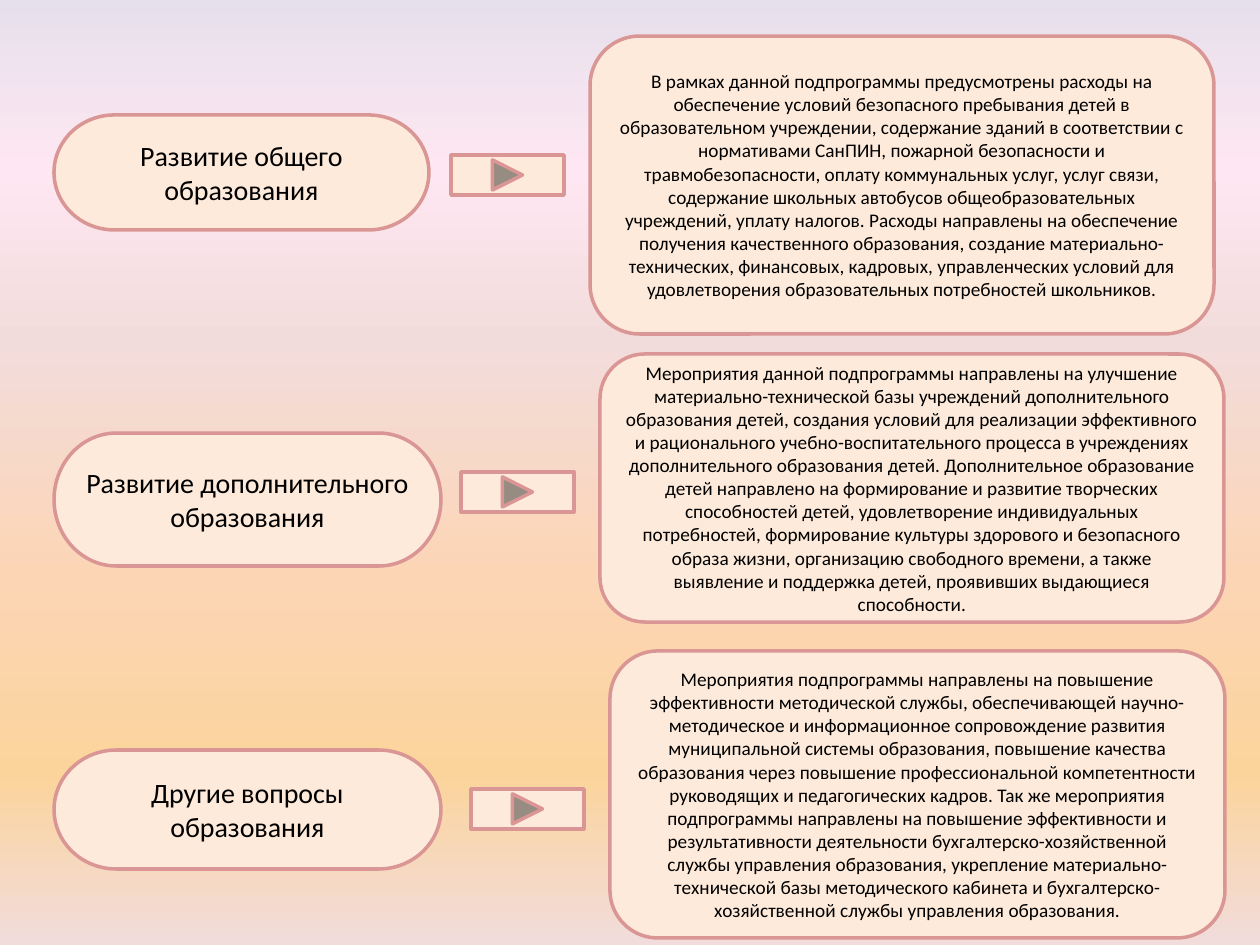
from dataclasses import dataclass

from pptx import Presentation
from pptx import util as u
from pptx.dml.color import RGBColor
from pptx.enum import shapes, text
from pptx.oxml import parse_xml
from pptx.oxml.ns import nsdecls

EMU_PER_PX = 914400 / 126


def px(length):
    return u.Emu(round(length * EMU_PER_PX))


@dataclass(frozen=True)
class Theme:
    font: str = "Calibri"
    fill: str = "FDEADA"
    border: str = "D99694"
    ink: str = "000000"
    border_width: int = 2
    label_size: int = 16
    body_size: int = 11
    # Background stops from top to bottom: percent, colour
    background: tuple = (
        (0, "E6E0EC"), (18, "FEE7F2"), (36, "F2DCDB"),
        (61, "FCD5B5"), (82, "FBD49C"), (100, "F2DCDB"),
    )


def write_text(frame, content, *, font, size, color):
    frame.word_wrap = True
    frame.vertical_anchor = text.MSO_ANCHOR.MIDDLE
    paragraph = frame.paragraphs[0]
    paragraph.alignment = text.PP_ALIGN.CENTER
    run = paragraph.add_run()
    run.text = content
    run.font.name = font
    run.font.size = u.Pt(size)
    run.font.color.rgb = RGBColor.from_string(color)


class SlideBuilder:
    def __init__(self, slide, theme):
        self.slide = slide
        self.theme = theme

    def background(self):
        fill = self.slide.background.fill
        fill.gradient()
        stops = self.slide.element.xpath(".//p:bgPr//a:gsLst")[0]
        for stop in list(stops):
            stops.remove(stop)
        for percent, color in self.theme.background:
            stops.append(parse_xml(
                f'<a:gs {nsdecls("a")} pos="{percent * 1000}">'
                f'<a:srgbClr val="{color}"/></a:gs>'))
        fill.gradient_angle = 270

    def outlined_shape(self, kind, box):
        shape = self.slide.shapes.add_shape(kind, *map(px, box))
        shape.shadow.inherit = False
        shape.fill.solid()
        shape.fill.fore_color.rgb = RGBColor.from_string(self.theme.fill)
        shape.line.color.rgb = RGBColor.from_string(self.theme.border)
        shape.line.width = u.Pt(self.theme.border_width)
        return shape

    def label(self, box, content):
        shape = self.outlined_shape(shapes.MSO_SHAPE.FLOWCHART_TERMINATOR, box)
        write_text(shape.text_frame, content, font=self.theme.font,
                   size=self.theme.label_size, color=self.theme.ink)

    def description(self, box, content):
        shape = self.outlined_shape(shapes.MSO_SHAPE.ROUNDED_RECTANGLE, box)
        write_text(shape.text_frame, content, font=self.theme.font,
                   size=self.theme.body_size, color=self.theme.ink)

    def forward_button(self, box):
        self.outlined_shape(
            shapes.MSO_SHAPE.ACTION_BUTTON_FORWARD_OR_NEXT, box)


# Each subprogramme: label, label box, description box, description
SUBPROGRAMMES = (
    ("Развитие общего образования",
     (54, 115, 375, 115), (590, 36, 624, 298),
     "В рамках данной подпрограммы предусмотрены расходы на обеспечение "
     "условий безопасного пребывания детей в образовательном учреждении, "
     "содержание зданий в соответствии с нормативами СанПИН, пожарной "
     "безопасности и травмобезопасности, оплату коммунальных услуг, услуг "
     "связи, содержание школьных автобусов общеобразовательных учреждений, "
     "уплату налогов. Расходы направлены на обеспечение получения "
     "качественного образования, создание материально- технических, "
     "финансовых, кадровых, управленческих условий для удовлетворения "
     "образовательных потребностей школьников."),
    ("Развитие дополнительного образования",
     (54, 433, 387, 133), (600, 354, 624, 268),
     "Мероприятия данной подпрограммы направлены на улучшение "
     "материально-технической базы учреждений дополнительного образования "
     "детей, создания условий для реализации эффективного и рационального "
     "учебно-воспитательного процесса в учреждениях дополнительного "
     "образования детей. Дополнительное образование детей направлено на "
     "формирование и развитие творческих способностей детей, удовлетворение "
     "индивидуальных потребностей, формирование культуры здорового и "
     "безопасного образа жизни, организацию свободного времени, а также "
     "выявление и поддержка детей, проявивших выдающиеся способности."),
    ("Другие вопросы образования",
     (54, 750, 387, 119), (610, 651, 615, 287),
     "Мероприятия подпрограммы направлены на повышение эффективности "
     "методической службы, обеспечивающей научно-методическое и "
     "информационное сопровождение развития муниципальной системы "
     "образования, повышение качества образования через повышение "
     "профессиональной компетентности руководящих и педагогических кадров. "
     "Так же мероприятия подпрограммы направлены на повышение эффективности "
     "и результативности деятельности бухгалтерско-хозяйственной службы "
     "управления образования, укрепление материально-технической базы "
     "методического кабинета и бухгалтерско-хозяйственной службы управления "
     "образования."),
)


def main():
    presentation = Presentation()
    presentation.slide_width, presentation.slide_height = px(1260), px(945)
    slide = presentation.slides.add_slide(presentation.slide_layouts[6])
    builder = SlideBuilder(slide, Theme())
    builder.background()

    # One row per subprogramme; buttons step down and to the right
    for row, (name, label_box, body_box, body) in enumerate(SUBPROGRAMMES):
        builder.label(label_box, name)
        builder.forward_button((451 + 10 * row, 155 + 317 * row, 113, 40))
        builder.description(body_box, body)

    presentation.save("out.pptx")


if __name__ == "__main__":
    main()
